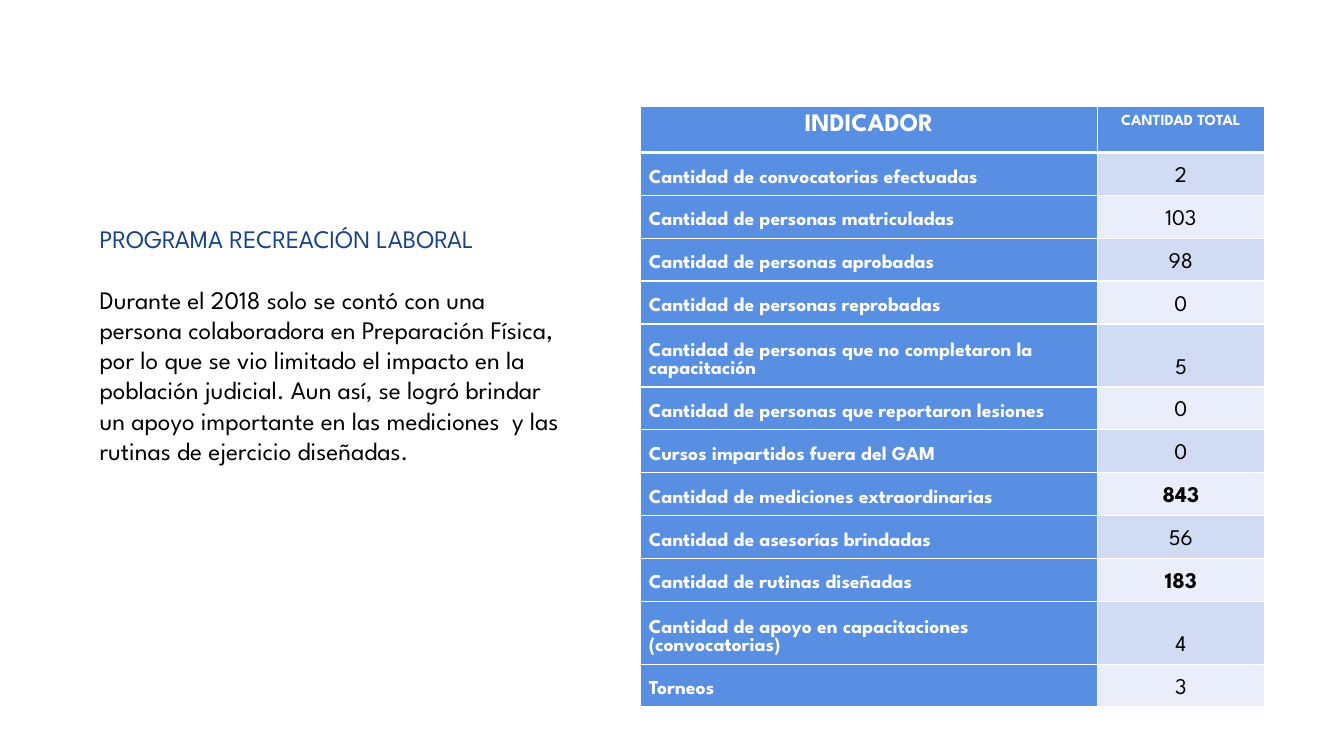
from lxml.etree import SubElement
from pptx import Presentation
from pptx.dml.color import RGBColor as Rgb
from pptx.enum.text import MSO_ANCHOR as Anchor, MSO_AUTO_SIZE as AutoSize, PP_ALIGN as Align
from pptx.oxml.ns import qn
from pptx.util import Cm, Pt

HEADING = "PROGRAMA RECREACIÓN LABORAL"
SUMMARY = (
    "Durante el 2018 solo se contó con una persona colaboradora en Preparación Física, "
    "por lo que se vio limitado el impacto en la población judicial. Aun así, se logró "
    "brindar un apoyo importante en las mediciones  y las rutinas de ejercicio diseñadas."
)
COLUMNS = ("INDICADOR", "CANTIDAD TOTAL")
INDICATORS = [
    ("Cantidad de convocatorias efectuadas", "2"),
    ("Cantidad de personas matriculadas", "103"),
    ("Cantidad de personas aprobadas", "98"),
    ("Cantidad de personas reprobadas", "0"),
    ("Cantidad de personas que no completaron la capacitación", "5"),
    ("Cantidad de personas que reportaron lesiones", "0"),
    ("Cursos impartidos fuera del GAM", "0"),
    ("Cantidad de mediciones extraordinarias", "843"),
    ("Cantidad de asesorías brindadas", "56"),
    ("Cantidad de rutinas diseñadas", "183"),
    ("Cantidad de apoyo en capacitaciones (convocatorias)", "4"),
    ("Torneos", "3"),
]
HIGHLIGHTS = {"843", "183"}
TWO_LINE_LENGTH = 48


class Theme:
    font = "League Spartan"
    navy, blue, white, black = "174386", "588FE2", "FFFFFF", "000000"
    bands = ("D1DBF4", "EAEEFA")
    body, header, total_header, label, amount = 18, 18, 11, 14, 16
    paragraph_gap = 21.6
    rule, header_rule = 1, 3


def style(paragraph, size, color, bold=False, align=Align.LEFT):
    paragraph.alignment = align
    font = paragraph.font
    font.name, font.size, font.bold = Theme.font, Pt(size), bold
    font.color.rgb = Rgb.from_string(color)


def add_borders(cell, widths):
    properties = cell._tc.get_or_add_tcPr()
    for position, (side, width) in enumerate(widths.items()):
        line = properties.makeelement(qn(f"a:{side}"), {"w": str(Pt(width))})
        fill = SubElement(line, qn("a:solidFill"))
        SubElement(fill, qn("a:srgbClr"), val=Theme.white)
        properties.insert(position, line)


def fill_cell(cell, text, fill, size, color, bold, align, anchor, top, bottom):
    cell.text = text
    cell.margin_left = cell.margin_right = cell.margin_top = cell.margin_bottom = Cm(0.2)
    cell.vertical_anchor = anchor
    cell.fill.solid()
    cell.fill.fore_color.rgb = Rgb.from_string(fill)
    style(cell.text_frame.paragraphs[0], size, color, bold, align)
    add_borders(cell, {"lnL": Theme.rule, "lnR": Theme.rule, "lnT": top, "lnB": bottom})


def add_summary(slide):
    frame = slide.shapes.add_textbox(Cm(2.26), Cm(5.51), Cm(12.17), Cm(7.19)).text_frame
    frame.word_wrap = True
    frame.auto_size = AutoSize.SHAPE_TO_FIT_TEXT
    heading = frame.paragraphs[0]
    heading.text = HEADING
    style(heading, Theme.body, Theme.navy)
    summary = frame.add_paragraph()
    summary.text = SUMMARY
    summary.space_before = Pt(Theme.paragraph_gap)
    style(summary, Theme.body, Theme.black)


def add_indicators(slide):
    heights = [1.14] + [1.58 if len(label) > TWO_LINE_LENGTH else 1.08 for label, _ in INDICATORS]
    widths = (11.5, 4.22)
    table = slide.shapes.add_table(
        len(heights), len(widths), Cm(16.15), Cm(2.68), Cm(sum(widths)), Cm(sum(heights))
    ).table
    for column, width in zip(table.columns, widths):
        column.width = Cm(width)
    for row, height in zip(table.rows, heights):
        row.height = Cm(height)

    for column, (text, size) in enumerate(zip(COLUMNS, (Theme.header, Theme.total_header))):
        fill_cell(table.cell(0, column), text, Theme.blue, size, Theme.white, True,
                  Align.CENTER, Anchor.TOP, Theme.rule, Theme.header_rule)
    for row, (label, amount) in enumerate(INDICATORS, 1):
        top = Theme.header_rule if row == 1 else Theme.rule
        fill_cell(table.cell(row, 0), label, Theme.blue, Theme.label, Theme.white, True,
                  Align.LEFT, Anchor.BOTTOM, top, Theme.rule)
        fill_cell(table.cell(row, 1), amount, Theme.bands[(row - 1) % 2], Theme.amount,
                  Theme.black, amount in HIGHLIGHTS, Align.CENTER, Anchor.BOTTOM, top, Theme.rule)


def main():
    deck = Presentation()
    deck.slide_width, deck.slide_height = Cm(33.87), Cm(19.05)
    slide = deck.slides.add_slide(deck.slide_layouts[6])
    add_summary(slide)
    add_indicators(slide)
    deck.save("out.pptx")


if __name__ == "__main__":
    main()
